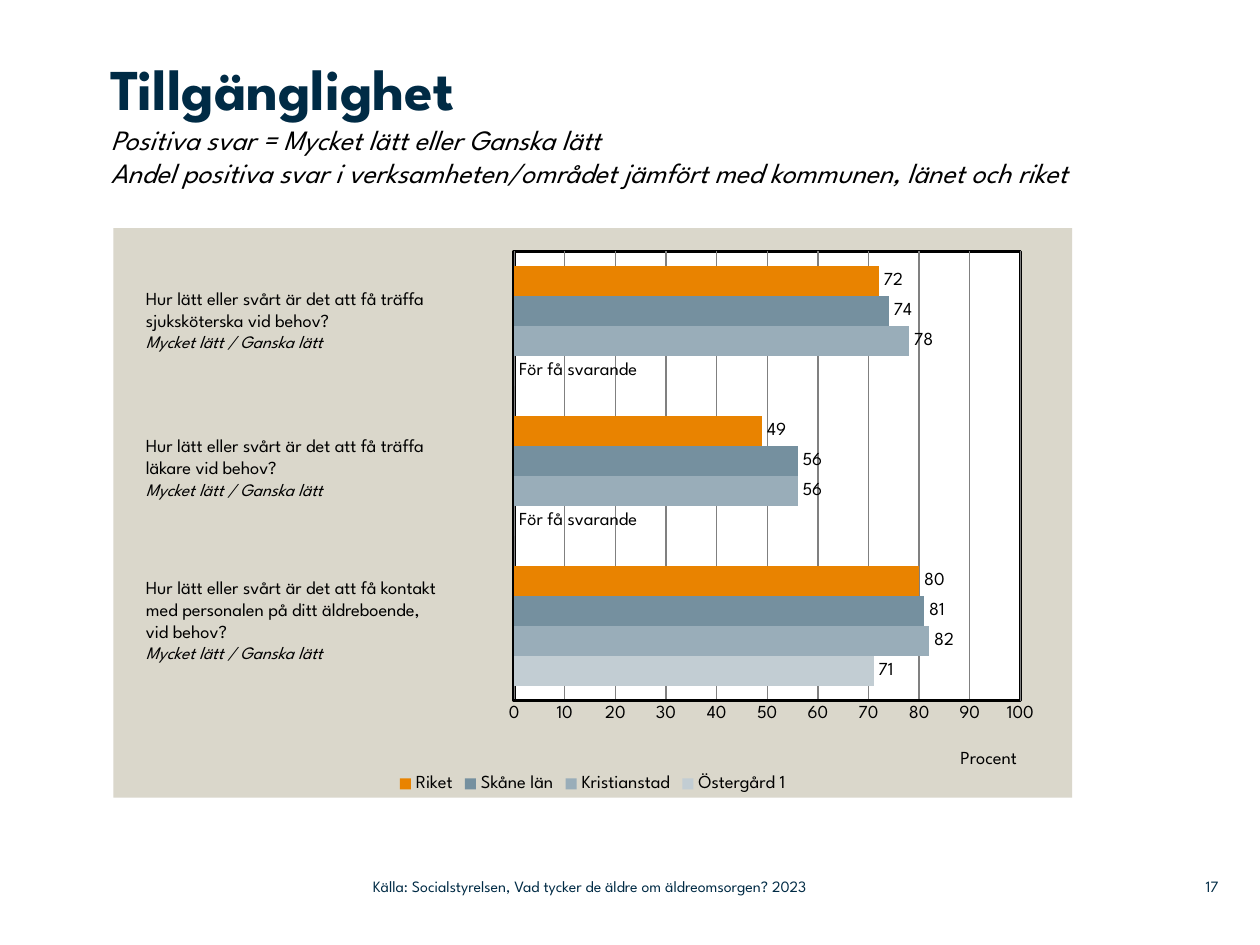
from dataclasses import dataclass

import pptx
import pptx.chart.data
import pptx.dml.color
import pptx.enum.chart
import pptx.enum.text
import pptx.oxml
import pptx.oxml.ns
import pptx.util
from pptx.util import Inches

ALIGN = pptx.enum.text.PP_ALIGN
ANCHOR = pptx.enum.text.MSO_ANCHOR


@dataclass(frozen=True)
class Theme:
    font: str = "League Spartan"
    navy: str = "002B45"
    black: str = "000000"
    grid: str = "808080"
    panel: str = "DAD7CB"
    white: str = "FFFFFF"
    title: float = 33
    subtitle: float = 16
    body: float = 10.5
    scale: float = 10
    footer: float = 9


THEME = Theme()
TITLE = "Tillgänglighet"
SUBTITLES = [
    "Positiva svar = Mycket lätt eller Ganska lätt",
    "Andel positiva svar i verksamheten/området jämfört med kommunen, länet och riket",
]
SCALE = "Mycket lätt / Ganska lätt"
TOO_FEW = "För få svarande"
CATEGORIES = ["1", "2", "3"]
SERIES = [
    ("Östergård 1", [71, 0, 0], "C2CDD3"),
    ("Kristianstad", [82, 56, 78], "99ADB9"),
    ("Skåne län", [81, 56, 74], "75909F"),
    ("Riket", [80, 49, 72], "E98300"),
]
QUESTIONS = [
    ((1.06, 2.23, 2.99, 0.81),
     ["Hur lätt eller svårt är det att få träffa sjuksköterska vid behov?"]),
    ((1.06, 3.4, 2.93, 0.81),
     ["Hur lätt eller svårt är det att få träffa", "läkare vid behov?"]),
    ((1.06, 4.52, 3.01, 0.98),
     ["Hur lätt eller svårt är det att få kontakt",
      "med personalen på ditt äldreboende,", "vid behov?"]),
]


def rgb(value):
    return pptx.dml.color.RGBColor.from_string(value)


def set_font(font, size, color=THEME.black, bold=False, italic=False):
    font.name = THEME.font
    font.size = pptx.util.Pt(size)
    font.color.rgb = rgb(color)
    font.bold = bold
    font.italic = italic


def clear_margins(frame):
    frame.margin_left = frame.margin_right = 0
    frame.margin_top = frame.margin_bottom = 0


def add_title(page, area):
    title = page.shapes.title
    title.left, title.top, title.width, title.height = map(Inches, area)
    frame = title.text_frame
    clear_margins(frame)
    frame.word_wrap = True
    frame.auto_size = pptx.enum.text.MSO_AUTO_SIZE.NONE
    frame.vertical_anchor = ANCHOR.TOP
    para = frame.paragraphs[0]
    para.alignment = ALIGN.LEFT
    span = para.add_run()
    span.text = TITLE
    set_font(span.font, THEME.title, THEME.navy, bold=True)
    for line in SUBTITLES:
        para.add_line_break()
        span = para.add_run()
        span.text = line
        set_font(span.font, THEME.subtitle, italic=True)


def add_text_box(page, area):
    frame = page.shapes.add_textbox(*map(Inches, area)).text_frame
    frame.word_wrap = True
    return frame


def add_question(page, area, lines):
    frame = add_text_box(page, area)
    frame.text = "\n".join(lines + [SCALE])
    for para in frame.paragraphs[:-1]:
        set_font(para.font, THEME.body)
    set_font(frame.paragraphs[-1].font, THEME.scale, italic=True)


def add_footer(page, area, text, alignment):
    frame = add_text_box(page, area)
    clear_margins(frame)
    frame.vertical_anchor = ANCHOR.MIDDLE
    frame.text = text
    para = frame.paragraphs[0]
    para.alignment = alignment
    set_font(para.font, THEME.footer, THEME.navy)


def place(parent, successors, left, top, width=None, height=None):
    """Give a chart part a manual layout, in fractions of the chart."""
    for old in parent.findall(pptx.oxml.ns.qn("c:layout")):
        parent.remove(old)
    settings = [("xMode", "edge"), ("yMode", "edge"), ("x", left), ("y", top)]
    if width is not None:
        settings.insert(0, ("layoutTarget", "inner"))
        settings += [("w", width), ("h", height)]
    body = "".join(f'<c:{name} val="{value}"/>' for name, value in settings)
    layout = pptx.oxml.parse_xml(
        f'<c:layout {pptx.oxml.ns.nsdecls("c")}>'
        f"<c:manualLayout>{body}</c:manualLayout></c:layout>")
    parent.insert_element_before(layout, *successors)


def style_chart_areas(chart):
    def properties(fill, line):
        return pptx.oxml.parse_xml(
            f'<c:spPr {pptx.oxml.ns.nsdecls("c", "a")}><a:solidFill>'
            f'<a:srgbClr val="{fill}"/></a:solidFill>{line}</c:spPr>')

    border = ('<a:ln w="25400"><a:solidFill>'
              f'<a:srgbClr val="{THEME.black}"/></a:solidFill></a:ln>')
    space = chart.element
    space.insert_element_before(
        properties(THEME.panel, "<a:ln><a:noFill/></a:ln>"),
        "c:txPr", "c:externalData", "c:printSettings", "c:userShapes")
    plot_area = space.chart.plotArea
    plot_area.append(properties(THEME.white, border))
    place(plot_area, ["c:barChart"], 0.418, 0.041, 0.528, 0.789)


def style_axes(chart):
    chart.category_axis.visible = False
    axis = chart.value_axis
    axis.minimum_scale, axis.maximum_scale, axis.major_unit = 0, 100, 10
    axis.major_tick_mark = pptx.enum.chart.XL_TICK_MARK.NONE
    axis.format.line.color.rgb = rgb(THEME.black)
    axis.format.line.width = pptx.util.Pt(2)
    axis.has_major_gridlines = True
    grid = axis.major_gridlines.format.line
    grid.color.rgb = rgb(THEME.grid)
    grid.width = pptx.util.Pt(0.75)
    title = axis.axis_title
    title.text_frame.text = "Procent"
    set_font(title.text_frame.paragraphs[0].font, THEME.body)
    place(title._element, ["c:overlay", "c:spPr", "c:txPr"], 0.88, 0.91)


def style_series(plot):
    outside = pptx.enum.chart.XL_LABEL_POSITION.OUTSIDE_END
    plot.gap_width = 100
    plot.overlap = 0
    plot.vary_by_categories = False
    for series, (_, values, color) in zip(plot.series, SERIES):
        series.format.fill.solid()
        series.format.fill.fore_color.rgb = rgb(color)
        labels = series.data_labels
        labels.show_value = True
        labels.position = outside
        set_font(labels.font, THEME.body)
        for index, value in enumerate(values):
            if value == 0:
                label = series.points[index].data_label
                label.text_frame.text = TOO_FEW
                label.position = outside
                set_font(label.text_frame.paragraphs[0].font, THEME.body)


def add_answer_chart(page, area):
    data = pptx.chart.data.CategoryChartData()
    data.categories = CATEGORIES
    for name, values, _ in SERIES:
        data.add_series(name, values)
    kind = pptx.enum.chart.XL_CHART_TYPE.BAR_CLUSTERED
    chart = page.shapes.add_chart(kind, *map(Inches, area), data).chart
    set_font(chart.font, THEME.body)
    chart.has_title = False
    chart.has_legend = True
    chart.legend.position = pptx.enum.chart.XL_LEGEND_POSITION.BOTTOM
    chart.legend.include_in_layout = False
    set_font(chart.legend.font, THEME.body)
    style_axes(chart)
    style_series(chart.plots[0])
    style_chart_areas(chart)


def main():
    deck = pptx.Presentation()
    deck.slide_width, deck.slide_height = Inches(10), Inches(7.5)
    page = deck.slides.add_slide(deck.slide_layouts[5])
    add_answer_chart(page, (0.9, 1.81, 7.61, 4.52))
    add_title(page, (0.88, 0.42, 7.77, 1.39))
    for area, lines in QUESTIONS:
        add_question(page, area, lines)
    add_footer(page, (9.2, 6.89, 0.47, 0.29), "17", ALIGN.RIGHT)
    add_footer(page, (2.96, 6.89, 4.43, 0.29),
               "Källa: Socialstyrelsen, Vad tycker de äldre om äldreomsorgen? 2023",
               ALIGN.LEFT)
    deck.save("out.pptx")


if __name__ == "__main__":
    main()
